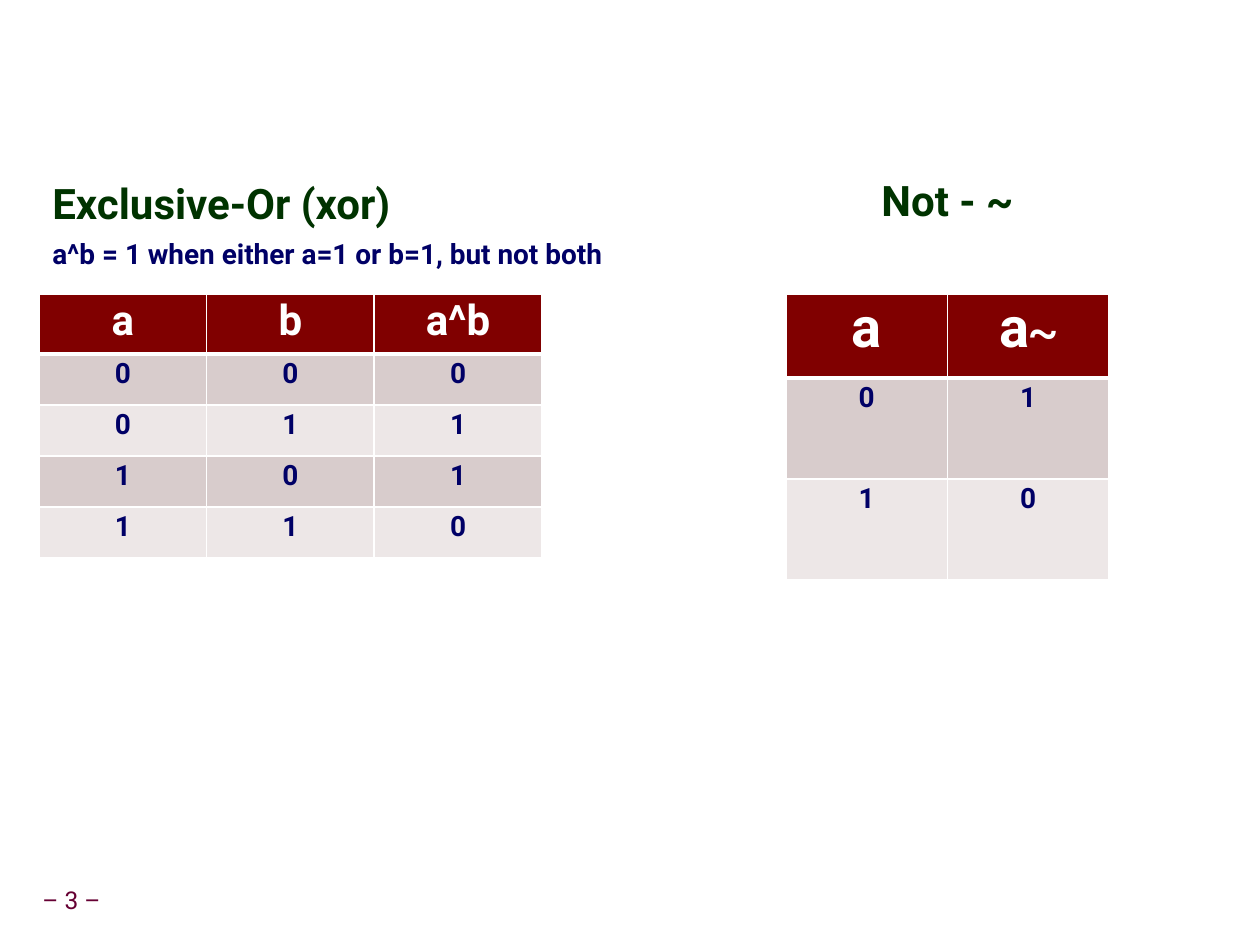
from dataclasses import dataclass
from itertools import product
from lxml.etree import SubElement
from pptx import Presentation
from pptx.dml.color import RGBColor as Color
from pptx.enum.text import MSO_ANCHOR as Anchor, PP_ALIGN as Align
from pptx.oxml.ns import qn
from pptx.util import Emu, Pt


@dataclass(frozen=True)
class Theme:
    font: str = "Roboto"
    green: str = "003300"
    navy: str = "000066"
    plum: str = "660033"
    maroon: str = "800000"
    white: str = "FFFFFF"
    bands: tuple = ("D8CCCC", "EDE7E7")
    head: int = 24
    large: int = 32
    body: int = 16
    foot: int = 14
    thin: int = 1
    thick: int = 3


THEME = Theme()


def px(num):
    return Emu(round(num * 914400 / 126))


def style(para, text, size, color, bold=True, align=Align.CENTER, line=0.9):
    para.text = text
    para.alignment = align
    para.line_spacing = line
    font = para.font
    font.name = THEME.font
    font.size = Pt(size)
    font.bold = bold
    font.color.rgb = Color.from_string(color)


def add_box(slide, left, top, width, height, wrap=True):
    box = slide.shapes.add_textbox(px(left), px(top), px(width), px(height))
    frame = box.text_frame
    frame.word_wrap = wrap
    return frame


def add_edge(cell, side, width):
    props = cell._tc.get_or_add_tcPr()
    edge = SubElement(props, qn("a:ln" + side), w=str(Pt(width)))
    fill = SubElement(edge, qn("a:solidFill"))
    SubElement(fill, qn("a:srgbClr"), val=THEME.white)


def add_truth(slide, left, top, width, heights, rows, size):
    count = len(rows[0])
    shape = slide.shapes.add_table(
        len(rows), count, px(left), px(top), px(width), px(sum(heights)))
    table = shape.table
    for row, height in zip(table.rows, heights):
        row.height = px(height)
    for r, c in product(range(len(rows)), range(count)):
        cell = table.cell(r, c)
        head = r == 0
        edges = {"L": THEME.thin, "R": THEME.thin,
                 "T": THEME.thick if r == 1 else THEME.thin,
                 "B": THEME.thick if head else THEME.thin}
        for side, weight in edges.items():
            add_edge(cell, side, weight)
        cell.fill.solid()
        back = THEME.maroon if head else THEME.bands[(r - 1) % 2]
        cell.fill.fore_color.rgb = Color.from_string(back)
        para = cell.text_frame.paragraphs[0]
        style(para, rows[r][c], size if head else THEME.body,
              THEME.white if head else THEME.navy)
        if rows[r][c].startswith("~"):
            para._p.get_or_add_pPr().set("rtl", "1")


def add_intro(slide):
    frame = add_box(slide, 40, 175, 1145, 719)
    style(frame.paragraphs[0], "Exclusive-Or (xor)", THEME.head,
          THEME.green, align=Align.LEFT, line=0.95)
    note = frame.add_paragraph()
    style(note, "a^b = 1 when either a=1 or b=1, but not both", THEME.body,
          THEME.navy, align=Align.LEFT, line=1.0)
    note.space_before = Pt(4)


def add_number(slide):
    frame = add_box(slide, 30, 882, 83, 39, wrap=False)
    frame.vertical_anchor = Anchor.MIDDLE
    frame.margin_left = frame.margin_right = px(6)
    style(frame.paragraphs[0], "– 3 –", THEME.foot, THEME.plum, bold=False)


def main():
    deck = Presentation()
    deck.slide_width, deck.slide_height = px(1260), px(945)
    slide = deck.slides.add_slide(deck.slide_layouts[6])
    add_number(slide)
    add_intro(slide)
    xor = [("a", "b", "a^b")]
    xor += [(str(a), str(b), str(a ^ b)) for a, b in product((0, 1), repeat=2)]
    add_truth(slide, 39, 294, 503, [60] + [51] * 4, xor, THEME.head)
    flip = [("a", "~a")] + [(str(a), str(1 - a)) for a in (0, 1)]
    add_truth(slide, 786, 294, 323, [84, 101, 101], flip, THEME.large)
    title = add_box(slide, 759, 174, 377, 58)
    style(title.paragraphs[0], "Not - ~", THEME.head, THEME.green)
    deck.save("out.pptx")


if __name__ == "__main__":
    main()
